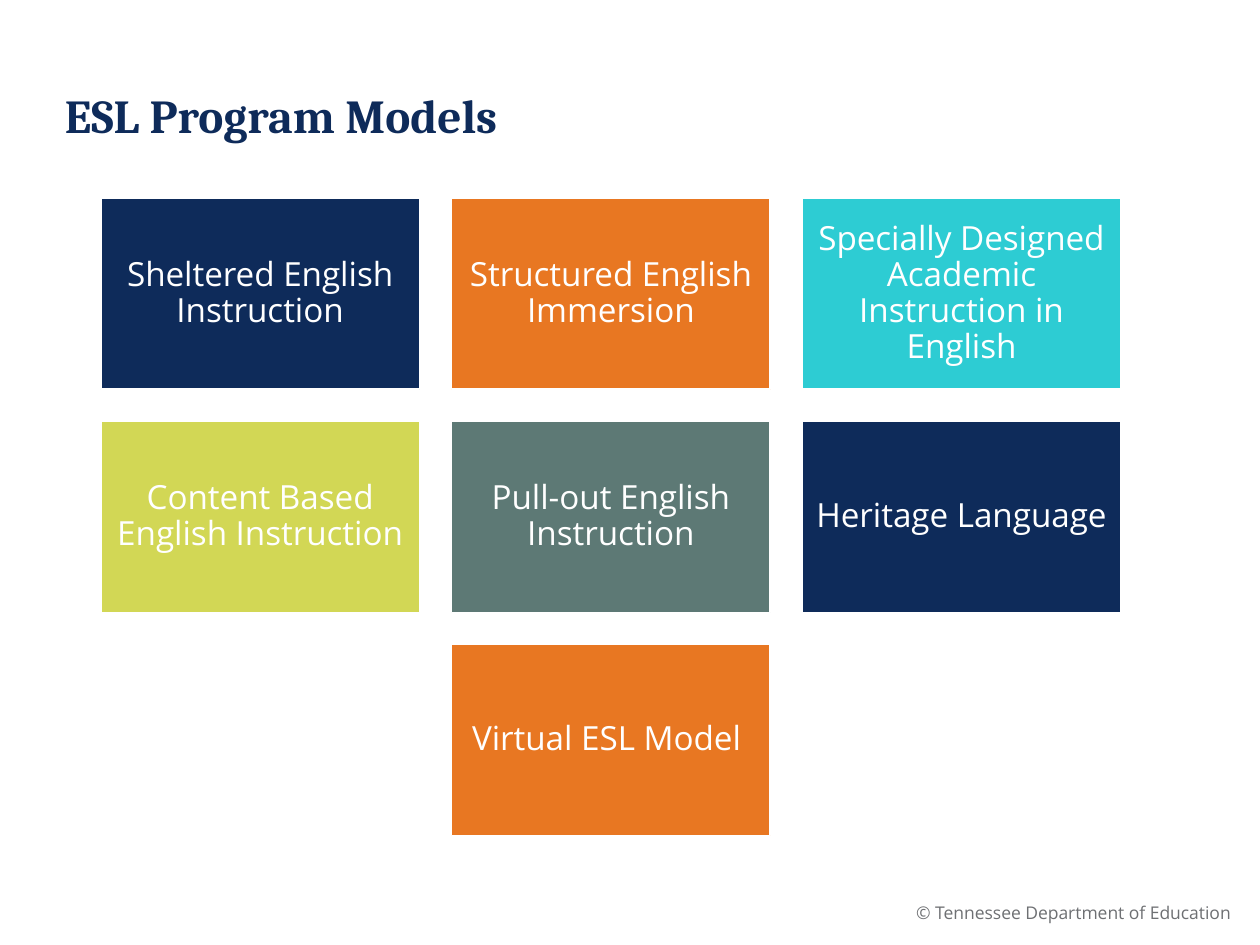
import pptx
import pptx.util
import pptx.dml.color
import pptx.enum.shapes
import pptx.enum.text

Pt = pptx.util.Pt
Align = pptx.enum.text.PP_ALIGN
Anchor = pptx.enum.text.MSO_ANCHOR

COLORS = {
    "navy": "0E2B5A",
    "orange": "E87722",
    "cyan": "2DCCD3",
    "lime": "D2D755",
    "sage": "5D7975",
    "gray": "6E7073",
    "white": "FFFFFF",
}

MODELS = [
    [("Sheltered English Instruction", "navy"),
     ("Structured English Immersion", "orange"),
     ("Specially Designed Academic Instruction in English", "cyan")],
    [("Content Based English Instruction", "lime"),
     ("Pull-out English Instruction", "sage"),
     ("Heritage Language ", "navy")],
    [("Virtual ESL Model ", "orange")],
]


class Deck:
    body = "Open Sans"
    head = "Cambria"

    def __init__(self, width, height):
        self.show = pptx.Presentation()
        self.show.slide_width = Pt(width)
        self.show.slide_height = Pt(height)
        self.slide = self.show.slides.add_slide(self.show.slide_layouts[6])

    def color(self, name):
        return pptx.dml.color.RGBColor.from_string(COLORS[name])

    def set_text(self, shape, text, size, color, font, align, anchor, space=1.0, bold=False):
        frame = shape.text_frame
        frame.word_wrap = True
        frame.vertical_anchor = anchor
        frame.text = text
        para = frame.paragraphs[0]
        para.alignment = align
        para.line_spacing = space
        style = para.runs[0].font
        style.name = font
        style.size = Pt(size)
        style.bold = bold
        style.color.rgb = self.color(color)

    def label(self, left, top, width, height, text, **style):
        box = self.slide.shapes.add_textbox(Pt(left), Pt(top), Pt(width), Pt(height))
        self.set_text(box, text, **style)

    def tile(self, left, top, width, height, text, fill):
        box = self.slide.shapes.add_shape(
            pptx.enum.shapes.MSO_SHAPE.RECTANGLE,
            Pt(left), Pt(top), Pt(width), Pt(height))
        box.shadow.inherit = False
        box.fill.solid()
        box.fill.fore_color.rgb = self.color(fill)
        box.line.color.rgb = self.color("white")
        box.line.width = Pt(1)
        frame = box.text_frame
        frame.margin_left = frame.margin_right = Pt(5.7)
        frame.margin_top = frame.margin_bottom = Pt(5.7)
        self.set_text(box, text, 19, "white", self.body, Align.CENTER, Anchor.MIDDLE, 0.9)

    def grid(self, left, top, width, height, gap, rows):
        most = max(len(row) for row in rows)
        for y, row in enumerate(rows):
            shift = (most - len(row)) / 2
            for x, (text, fill) in enumerate(row):
                self.tile(left + (x + shift) * (width + gap),
                          top + y * (height + gap), width, height, text, fill)


def main():
    deck = Deck(720, 540)
    deck.label(487.5, 513.4, 225.4, 18, "© Tennessee Department of Education ",
               size=10, color="gray", font=deck.body,
               align=Align.RIGHT, anchor=Anchor.TOP, space=0.9)
    deck.label(30, 18, 654, 95, "ESL Program Models",
               size=27, color="navy", font=deck.head,
               align=Align.LEFT, anchor=Anchor.MIDDLE, bold=True)
    deck.grid(57.6, 113.2, 182.2, 109.3, 18.2, MODELS)
    deck.show.save("out.pptx")


if __name__ == "__main__":
    main()
